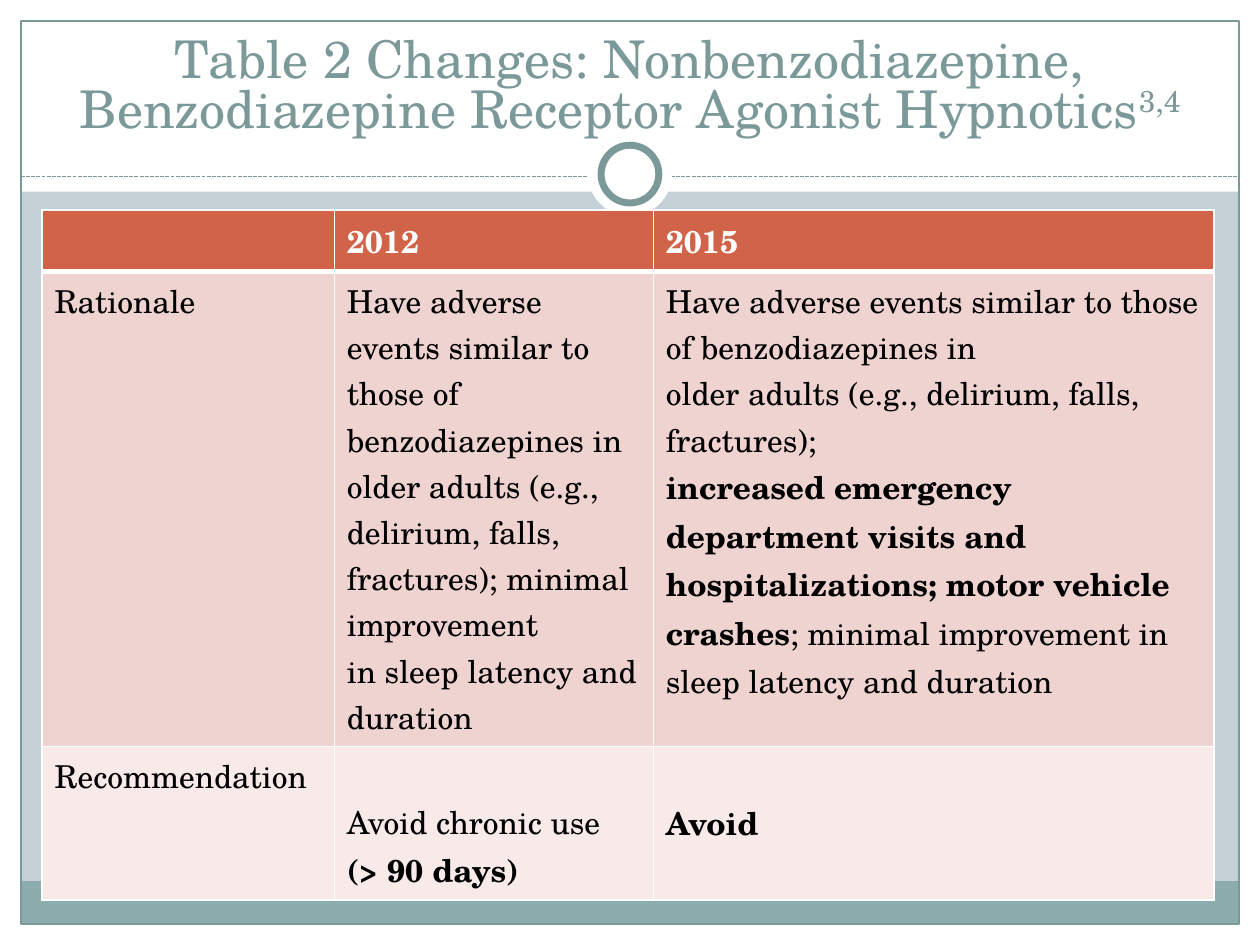
"""Build the slide on changes to the hypnotics table."""
from lxml import etree
from pptx import Presentation
from pptx.dml.color import RGBColor
from pptx.enum import dml, shapes, text
from pptx.oxml import ns
from pptx.util import Pt

WHITE = RGBColor(0xFF, 0xFF, 0xFF)
BLACK = RGBColor(0, 0, 0)
BACKGROUND = RGBColor(0xC5, 0xD1, 0xD7)
SAGE = RGBColor(0x7C, 0x99, 0x9A)
TEAL = RGBColor(0x8C, 0xAD, 0xAE)
ORANGE = RGBColor(0xD1, 0x63, 0x49)
ROSE = RGBColor(0xEE, 0xD3, 0xD0)
PALE_ROSE = RGBColor(0xF7, 0xEA, 0xE9)

FONT = "TeX Gyre Schola"
WIDTH, HEIGHT, MARGIN = 720, 540, 12
COLUMN_WIDTHS = (167, 182.3, 320.3)
ROW_HEIGHT = 29.5
LINE_HEIGHT = 26.4
CELL_MARGIN = 3.6
ROW_FILLS = (ORANGE, ROSE, PALE_ROSE)

# Each cell lists paragraphs; each paragraph lists (wording, bold) runs.
ROWS = (
    ((), ((("2012", True),),), ((("2015", True),),)),
    (
        ((("Rationale", False),),),
        (
            (("Have adverse events similar to", False),),
            (("those of benzodiazepines in older adults (e.g., delirium, falls,", False),),
            (("fractures); minimal improvement", False),),
            (("in sleep latency and duration", False),),
        ),
        (
            (("Have adverse events similar to those of benzodiazepines in", False),),
            (("older adults (e.g., delirium, falls, fractures);", False),),
            (
                ("increased emergency department visits and hospitalizations; "
                 "motor vehicle crashes", True),
                ("; minimal improvement in sleep latency and duration", False),
            ),
        ),
    ),
    (
        ((("Recommendation", False),),),
        ((("Avoid chronic use", False),), (("(> 90 days)", True),)),
        ((("Avoid", True),),),
    ),
)


def apply_format(target, values):
    """Set every attribute in values on target."""
    for name, value in values.items():
        setattr(target, name, value)


def add_run(paragraph, wording, size, color, bold=False):
    """Append a formatted run and return it."""
    run = paragraph.add_run()
    run.text = wording
    apply_format(run.font, {"name": FONT, "size": Pt(size), "bold": bold})
    run.font.color.rgb = color
    return run


def add_figure(slide, kind, box, fill=None, line_width=None):
    """Add a preset shape with an optional fill and sage outline."""
    shape = slide.shapes.add_shape(kind, *map(Pt, box))
    shape.shadow.inherit = False
    if fill is None:
        shape.fill.background()
    else:
        shape.fill.solid()
        shape.fill.fore_color.rgb = fill
    if line_width is None:
        shape.line.fill.background()
    else:
        shape.line.color.rgb = SAGE
        shape.line.width = Pt(line_width)


def add_dashed_rule(slide, y):
    """Add the dashed rule that runs between the side margins."""
    rule = slide.shapes.add_connector(
        shapes.MSO_CONNECTOR.STRAIGHT, Pt(MARGIN), Pt(y), Pt(WIDTH - MARGIN), Pt(y))
    rule.line.color.rgb = SAGE
    apply_format(rule.line, {"width": Pt(0.75), "dash_style": dml.MSO_LINE.SQUARE_DOT})
    etree.SubElement(rule._element.spPr, ns.qn("a:effectLst"))


def add_frame(slide):
    """Add the white margins, bottom band, outline, rule and ring."""
    rectangle, oval = shapes.MSO_SHAPE.RECTANGLE, shapes.MSO_SHAPE.OVAL
    for box in (
        (0, HEIGHT - MARGIN, WIDTH, MARGIN),
        (0, 0, WIDTH, 109.5),
        (0, 0, MARGIN, HEIGHT),
        (WIDTH - MARGIN, 0, MARGIN, HEIGHT),
    ):
        add_figure(slide, rectangle, box, WHITE)
    inner_width = WIDTH - 2 * MARGIN
    add_figure(slide, rectangle, (MARGIN, 503.5, inner_width, 24.5), TEAL)
    add_figure(slide, rectangle,
               (MARGIN, MARGIN, inner_width, HEIGHT - 2 * MARGIN), line_width=0.75)
    add_dashed_rule(slide, 100.8)
    for diameter, line_width in ((48, None), (33, 4)):
        corner = (WIDTH / 2 - diameter / 2, 99.5 - diameter / 2)
        add_figure(slide, oval, (*corner, diameter, diameter), WHITE, line_width)


def add_title(slide):
    """Fill the title placeholder and bring it in front of the frame."""
    title = slide.shapes.title
    slide.shapes._spTree.append(title._element)
    apply_format(title, {"left": Pt(24), "top": Pt(22.5),
                         "width": Pt(672), "height": Pt(60)})
    apply_format(title.text_frame, {"word_wrap": True,
                                    "auto_size": text.MSO_AUTO_SIZE.NONE,
                                    "vertical_anchor": text.MSO_ANCHOR.BOTTOM})
    paragraph = title.text_frame.paragraphs[0]
    apply_format(paragraph, {"alignment": text.PP_ALIGN.CENTER, "line_spacing": 0.8})
    add_run(paragraph, "Table 2 Changes: Nonbenzodiazepine, "
            "Benzodiazepine Receptor Agonist Hypnotics", 29.7, SAGE)
    citation = add_run(paragraph, "3,4", 29.7, SAGE)
    citation._r.get_or_add_rPr().set("baseline", "30000")


def set_borders(cell, widths):
    """Draw white cell borders from a dict of side to width."""
    properties = cell._tc.get_or_add_tcPr()
    for position, (side, width) in enumerate(widths.items()):
        line = etree.Element(ns.qn(f"a:ln{side}"), w=str(int(Pt(width))))
        fill = etree.SubElement(line, ns.qn("a:solidFill"))
        etree.SubElement(fill, ns.qn("a:srgbClr"), val=str(WHITE))
        properties.insert(position, line)


def fill_cell(cell, paragraphs, color):
    """Write the paragraphs of one cell."""
    frame = cell.text_frame
    for index, runs in enumerate(paragraphs):
        paragraph = frame.add_paragraph() if index else frame.paragraphs[0]
        for wording, bold in runs:
            add_run(paragraph, wording, 18, color, bold)


def add_comparison_table(slide):
    """Add the table that compares 2012 with 2015."""
    frame = slide.shapes.add_table(
        len(ROWS), len(COLUMN_WIDTHS), Pt(24), Pt(120),
        Pt(sum(COLUMN_WIDTHS)), Pt(ROW_HEIGHT * len(ROWS)))
    table = frame.table
    for column, width in zip(table.columns, COLUMN_WIDTHS):
        column.width = Pt(width)
    for row_index, (row, fill) in enumerate(zip(ROWS, ROW_FILLS)):
        for column_index, paragraphs in enumerate(row):
            cell = table.cell(row_index, column_index)
            cell.fill.solid()
            cell.fill.fore_color.rgb = fill
            set_borders(cell, {"L": 1, "R": 1, "T": 3 if row_index == 1 else 1,
                               "B": 3 if row_index == 0 else 1})
            fill_cell(cell, paragraphs, BLACK if row_index else WHITE)
            if row_index == 2 and column_index:
                cell.margin_top = Pt(CELL_MARGIN + LINE_HEIGHT)
    frame.height = Pt(324.7)


def main():
    """Build and save the presentation."""
    presentation = Presentation()
    apply_format(presentation, {"slide_width": Pt(WIDTH), "slide_height": Pt(HEIGHT)})
    slide = presentation.slides.add_slide(presentation.slide_layouts[5])
    slide.background.fill.solid()
    slide.background.fill.fore_color.rgb = BACKGROUND
    add_frame(slide)
    add_title(slide)
    add_comparison_table(slide)
    presentation.save("out.pptx")


if __name__ == "__main__":
    main()
